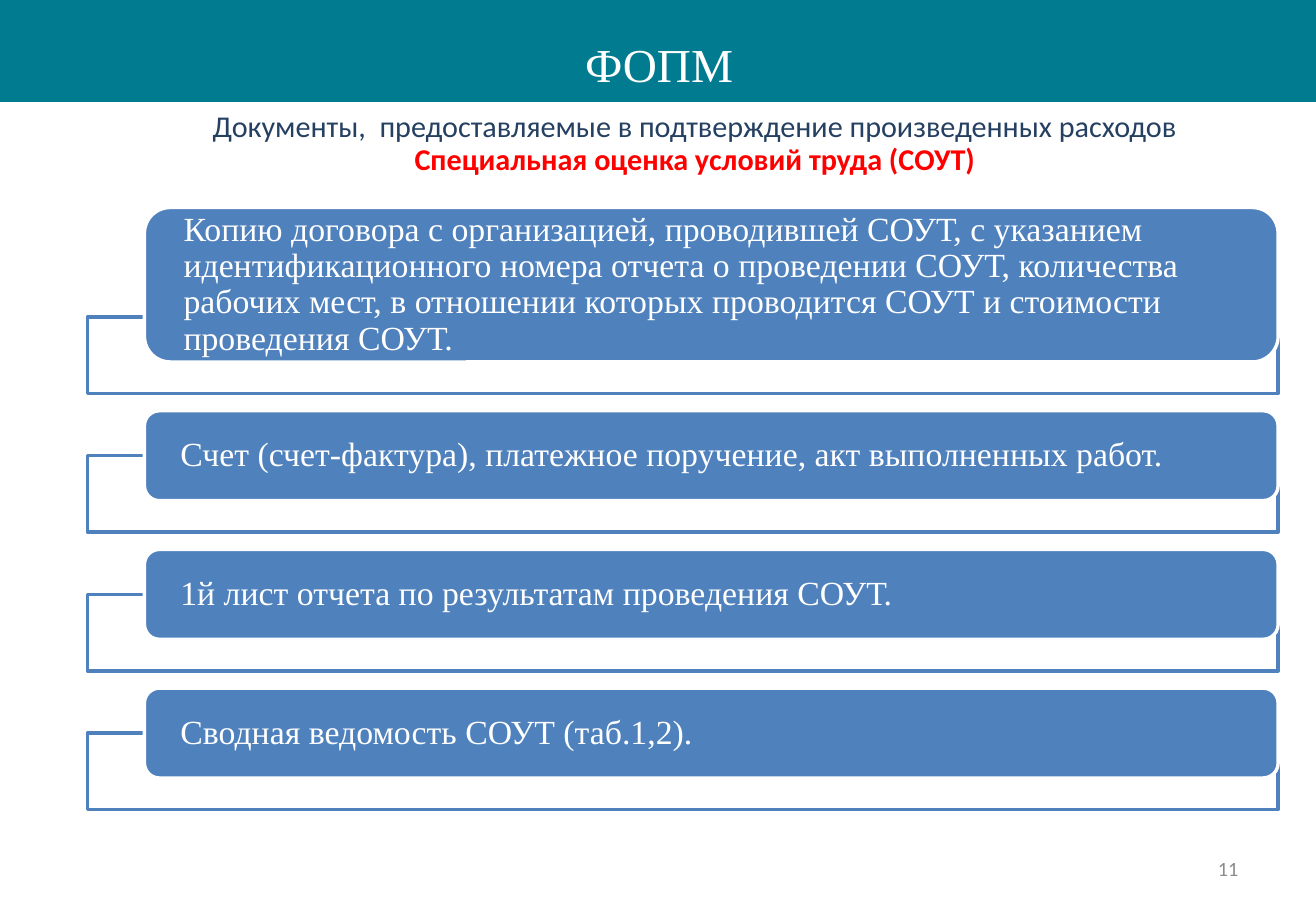
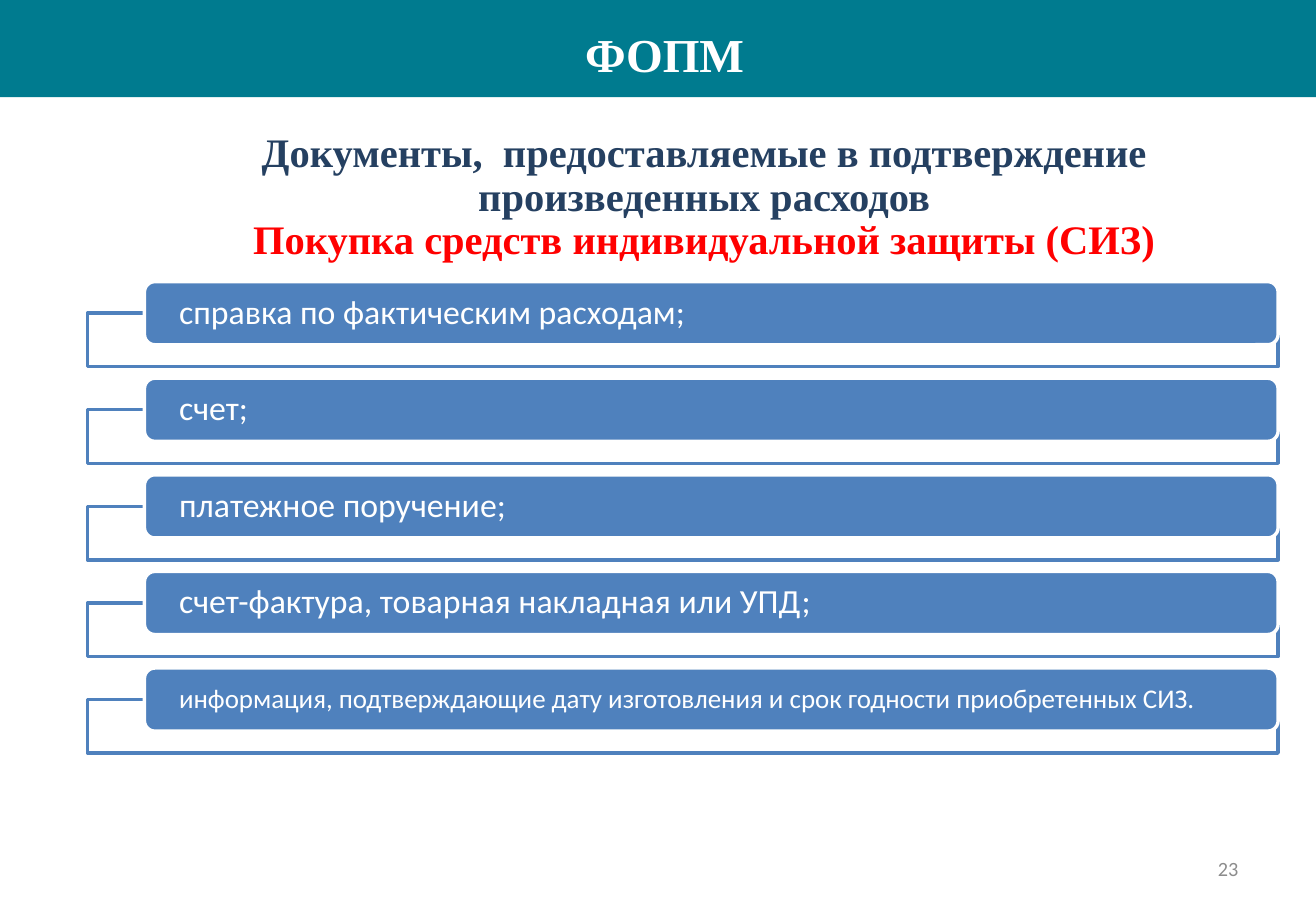
from dataclasses import dataclass

from pptx import Presentation
from pptx.dml.color import RGBColor
from pptx.enum.shapes import MSO_SHAPE
from pptx.enum.text import MSO_ANCHOR, MSO_AUTO_SIZE, PP_ALIGN
from pptx.util import Cm, Pt

RECTANGLE, ROUNDED = MSO_SHAPE.RECTANGLE, MSO_SHAPE.ROUNDED_RECTANGLE
TOP, MIDDLE = MSO_ANCHOR.TOP, MSO_ANCHOR.MIDDLE
LEFT, CENTER, RIGHT = PP_ALIGN.LEFT, PP_ALIGN.CENTER, PP_ALIGN.RIGHT
NO_AUTOFIT = MSO_AUTO_SIZE.NONE

TEAL, BLUE, NAVY = "007B8F", "4F81BD", "254061"
RED, GRAY, WHITE = "FF0000", "8C8C8C", "FFFFFF"
SERIF, SANS = "Times New Roman", "Calibri"

PAGE_WIDTH, PAGE_HEIGHT = 27.51, 19.05
FRAME_LEFT, FRAME_WIDTH = 1.83, 24.89
BAR_LEFT, BAR_WIDTH = 3.02, 23.7
HEADING_WIDTH = 21.34


@dataclass
class TextStyle:
    font: str
    size: float
    color: str = WHITE
    bold: bool = False
    align: PP_ALIGN = LEFT
    line_spacing: float = 0.9


@dataclass
class Item:
    text: str
    bar_height: float
    style: TextStyle


@dataclass
class ItemList:
    """Frames at an equal pitch, each overlapped by its bar."""
    top: float
    pitch: float
    frame_height: float
    overlap: float
    items: list[Item]


@dataclass
class PageContent:
    number: str
    band_height: float
    title_top: float
    title_bold: bool
    heading_left: float
    heading_top: float
    heading: list[tuple[str, TextStyle]]
    item_list: ItemList


def rgb(color: str) -> RGBColor:
    return RGBColor.from_string(color)


def set_attributes(target, values: dict) -> None:
    for name, value in values.items():
        setattr(target, name, value)


def set_frame(frame, anchor: MSO_ANCHOR, left: float = 0, top: float = 0,
              right: float = 0) -> None:
    set_attributes(frame, {
        "word_wrap": True, "auto_size": NO_AUTOFIT, "vertical_anchor": anchor,
        "margin_left": Cm(left), "margin_top": Cm(top),
        "margin_right": Cm(right), "margin_bottom": 0})


def write(para, text: str, style: TextStyle) -> None:
    set_attributes(para, {"alignment": style.align,
                          "line_spacing": style.line_spacing})
    span = para.add_run()
    span.text = text
    set_attributes(span.font, {"name": style.font, "size": Pt(style.size),
                               "bold": style.bold})
    span.font.color.rgb = rgb(style.color)


def add_box(page, kind: MSO_SHAPE, left: float, top: float, width: float,
            height: float, fill: str, line: str):
    box = page.shapes.add_shape(kind, Cm(left), Cm(top), Cm(width), Cm(height))
    box.shadow.inherit = False
    box.fill.solid()
    box.fill.fore_color.rgb = rgb(fill)
    box.line.color.rgb = rgb(line)
    box.line.width = Pt(2)
    return box


def add_title(page, content: PageContent) -> None:
    # The title placeholder itself forms the coloured band
    title = page.shapes.title
    set_attributes(title, {"left": 0, "top": 0, "width": Cm(PAGE_WIDTH),
                           "height": Cm(content.band_height)})
    title.fill.solid()
    title.fill.fore_color.rgb = rgb(TEAL)
    set_frame(title.text_frame, TOP, left=12.23, top=content.title_top)
    style = TextStyle(SERIF, 28, bold=content.title_bold, line_spacing=1.0)
    write(title.text_frame.paragraphs[0], "ФОПМ", style)


def add_heading(page, content: PageContent) -> None:
    box = page.shapes.add_textbox(Cm(content.heading_left), Cm(content.heading_top),
                                  Cm(HEADING_WIDTH), Cm(1.5))
    set_frame(box.text_frame, TOP)
    for index, (text, style) in enumerate(content.heading):
        para = box.text_frame.add_paragraph() if index else box.text_frame.paragraphs[0]
        write(para, text, style)


def add_items(page, rows: ItemList) -> None:
    for index, item in enumerate(rows.items):
        frame_top = rows.top + index * rows.pitch
        add_box(page, RECTANGLE, FRAME_LEFT, frame_top, FRAME_WIDTH,
                rows.frame_height, WHITE, BLUE)
        bar = add_box(page, ROUNDED, BAR_LEFT,
                      frame_top + rows.overlap - item.bar_height,
                      BAR_WIDTH, item.bar_height, BLUE, WHITE)
        set_frame(bar.text_frame, MIDDLE, left=0.66, right=0.66)
        write(bar.text_frame.paragraphs[0], item.text, item.style)


def add_number(page, number: str) -> None:
    box = page.shapes.add_textbox(Cm(19.71), Cm(17.65), Cm(6.43), Cm(1.02))
    set_frame(box.text_frame, MIDDLE, right=0.25)
    write(box.text_frame.paragraphs[0], number,
          TextStyle(SANS, 12, GRAY, align=RIGHT, line_spacing=1.0))


def add_page(deck, content: PageContent) -> None:
    page = deck.slides.add_slide(deck.slide_layouts[5])
    add_title(page, content)
    add_heading(page, content)
    add_items(page, content.item_list)
    add_number(page, content.number)


# Content
HEADING = "Документы,  предоставляемые в подтверждение произведенных расходов"
SERIF_ITEM, SANS_ITEM = TextStyle(SERIF, 20), TextStyle(SANS, 20)

ASSESSMENT = PageContent(
    number="11", band_height=2.13, title_top=0.74, title_bold=False,
    heading_left=3.86, heading_top=2.34,
    heading=[
        (HEADING, TextStyle(SANS, 17.9, NAVY, align=CENTER)),
        ("Специальная оценка условий труда (СОУТ)",
         TextStyle(SANS, 17.9, RED, True, CENTER)),
    ],
    item_list=ItemList(6.63, 2.9, 1.6, 0.94, [
        Item("Копию договора с организацией, проводившей СОУТ, с указанием "
             "идентификационного номера отчета о проведении СОУТ, количества "
             "рабочих мест, в отношении которых проводится СОУТ и стоимости "
             "проведения СОУТ.", 3.23, SERIF_ITEM),
        Item("Счет (счет-фактура), платежное поручение, акт выполненных работ.",
             1.88, SERIF_ITEM),
        Item("1й лист отчета по результатам проведения СОУТ.", 1.88, SERIF_ITEM),
        Item("Сводная ведомость СОУТ (таб.1,2).", 1.88, SERIF_ITEM),
    ]))

PROTECTION = PageContent(
    number="23", band_height=2.03, title_top=0.53, title_bold=True,
    heading_left=4.05, heading_top=2.77,
    heading=[
        (HEADING, TextStyle(SERIF, 24, NAVY, True, CENTER)),
        ("Покупка средств индивидуальной защиты (СИЗ)",
         TextStyle(SERIF, 24, RED, True, CENTER)),
    ],
    item_list=ItemList(6.55, 2.02, 1.12, 0.66, [
        Item("справка по фактическим расходам;", 1.32, SANS_ITEM),
        Item("счет;", 1.32, SANS_ITEM),
        Item("платежное поручение;", 1.32, SANS_ITEM),
        Item("счет-фактура, товарная накладная или УПД;", 1.32, SANS_ITEM),
        Item("информация, подтверждающие дату изготовления и срок годности "
             "приобретенных СИЗ.", 1.32, TextStyle(SANS, 16)),
    ]))


def main() -> None:
    deck = Presentation()
    deck.slide_width, deck.slide_height = Cm(PAGE_WIDTH), Cm(PAGE_HEIGHT)
    for content in (ASSESSMENT, PROTECTION):
        add_page(deck, content)
    deck.save("out.pptx")


if __name__ == "__main__":
    main()
